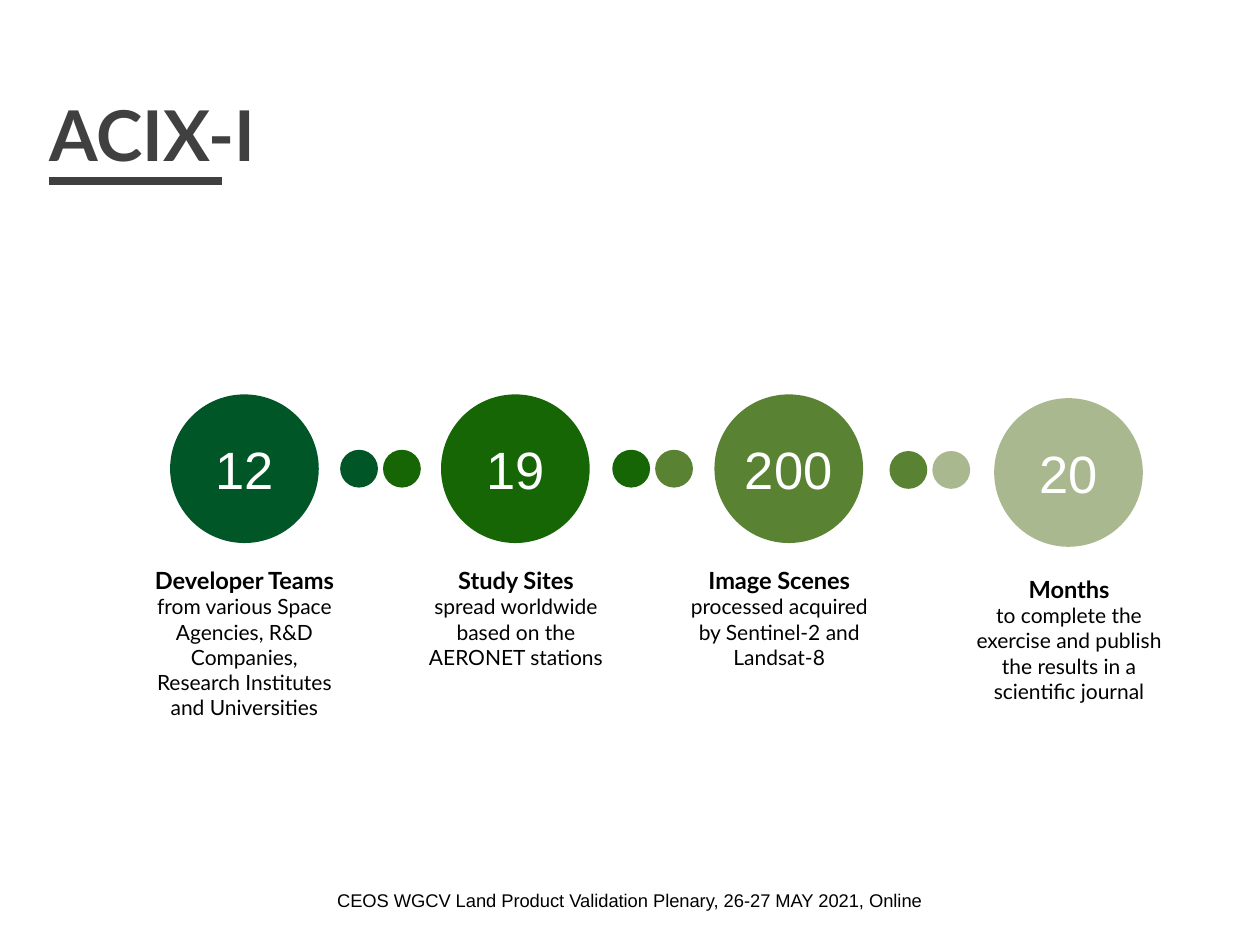
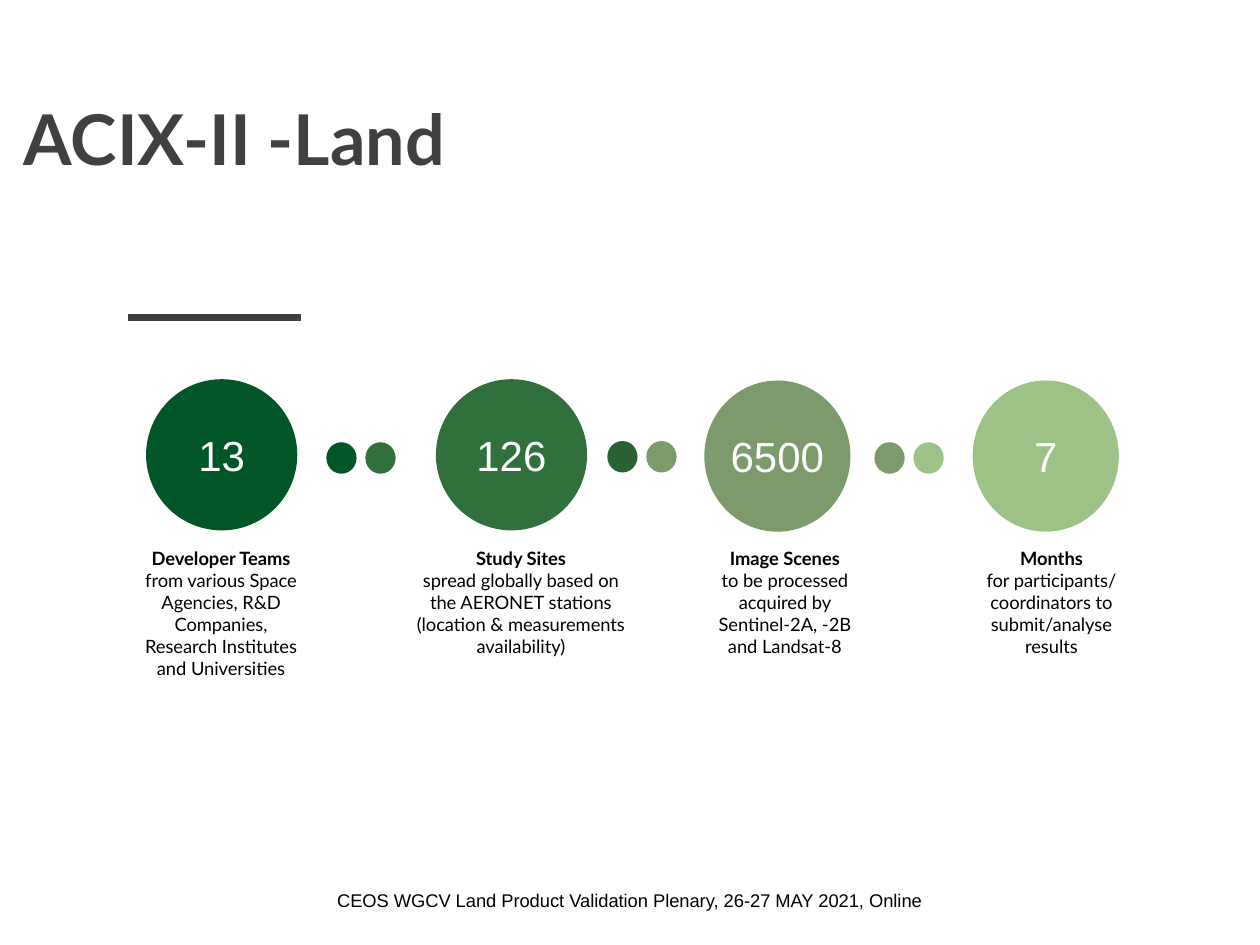
import pptx
import pptx.util
from dataclasses import dataclass
from pptx.dml.color import RGBColor
from pptx.enum.shapes import MSO_CONNECTOR, MSO_SHAPE
from pptx.enum.text import MSO_ANCHOR, MSO_AUTO_SIZE, PP_ALIGN
from pptx.oxml.xmlchemy import OxmlElement
from pptx.util import Inches

# Shared colours, fonts and wording
WHITE = RGBColor(0xFF, 0xFF, 0xFF)
BLACK = RGBColor(0x00, 0x00, 0x00)
CHARCOAL = RGBColor(0x40, 0x40, 0x40)
DARK_GREEN = RGBColor(0x00, 0x56, 0x27)
LEAF_GREEN = RGBColor(0x16, 0x66, 0x05)
OLIVE = RGBColor(0x59, 0x82, 0x33)
PALE_OLIVE = RGBColor(0xA9, 0xB8, 0x8E)
FOREST = RGBColor(0x2F, 0x70, 0x3C)
DEEP_FOREST = RGBColor(0x28, 0x61, 0x33)
SAGE = RGBColor(0x7C, 0x9A, 0x6A)
LIGHT_GREEN = RGBColor(0x9D, 0xC2, 0x86)
HEADING_FONT = "Lato"
NUMBER_FONT = "Arial"
FOOTER = "CEOS WGCV Land Product Validation Plenary, 26-27 MAY 2021, Online"
TEAM_LINES = ["from various Space Agencies, R&D Companies,",
              "Research Institutes", "and Universities"]


@dataclass
class Stage:
    number: str
    color: RGBColor
    circle: tuple  # left, top, width, height
    caption: tuple
    heading: str
    lines: list


@dataclass
class Style:
    number_size: float
    heading_size: float
    body_size: float
    dot_size: tuple
    dot_step: float


def write(paragraph, text, font=HEADING_FONT, size=12, color=BLACK, bold=False,
          align=PP_ALIGN.CENTER):
    paragraph.alignment = align
    run = paragraph.add_run()
    run.text = text
    run.font.name = font
    run.font.size = pptx.util.Pt(size)
    run.font.bold = bold
    run.font.color.rgb = color


def add_text_box(slide, box):
    frame = slide.shapes.add_textbox(*map(Inches, box)).text_frame
    frame.word_wrap = True
    return frame


def add_circle(slide, box, color):
    circle = slide.shapes.add_shape(MSO_SHAPE.OVAL, *map(Inches, box))
    circle.shadow.inherit = False
    circle.fill.solid()
    circle.fill.fore_color.rgb = color
    circle.line.fill.background()
    return circle


def add_title(slide, text, box):
    title = slide.shapes.title
    title.left, title.top, title.width, title.height = map(Inches, box)
    frame = title.text_frame
    frame.auto_size = MSO_AUTO_SIZE.NONE
    frame.vertical_anchor = MSO_ANCHOR.TOP
    write(frame.paragraphs[0], text, size=40, color=CHARCOAL, bold=True,
          align=PP_ALIGN.LEFT)


def add_rule(slide, left, top, width=1.37):
    rule = slide.shapes.add_connector(
        MSO_CONNECTOR.STRAIGHT, *map(Inches, (left, top, left + width, top)))
    rule.line.color.rgb = CHARCOAL
    rule.line.width = pptx.util.Pt(4.5)
    rule._element.spPr.append(OxmlElement("a:effectLst"))


def add_stage(slide, stage, style):
    # Number in its circle
    frame = add_circle(slide, stage.circle, stage.color).text_frame
    frame.word_wrap = False
    frame.vertical_anchor = MSO_ANCHOR.MIDDLE
    write(frame.paragraphs[0], stage.number, font=NUMBER_FONT,
          size=style.number_size, color=WHITE)
    # Caption below
    frame = add_text_box(slide, stage.caption)
    write(frame.paragraphs[0], stage.heading, size=style.heading_size, bold=True)
    for line in stage.lines:
        write(frame.add_paragraph(), line, size=style.body_size)


def add_dot_pair(slide, left, top, colors, style):
    for index, color in enumerate(colors):
        add_circle(slide, (left + index * style.dot_step, top, *style.dot_size), color)


def add_footer(slide):
    frame = add_text_box(slide, (0, 7.01, 10, 0.52))
    write(frame.paragraphs[0], FOOTER, font=NUMBER_FONT, size=10.5)


def add_figures_slide(presentation, title, title_box, rule, stages, dot_pairs, style):
    slide = presentation.slides.add_slide(presentation.slide_layouts[5])
    add_title(slide, title, title_box)
    add_rule(slide, *rule)
    for stage in stages:
        add_stage(slide, stage, style)
    for left, top, *colors in dot_pairs:
        add_dot_pair(slide, left, top, colors, style)
    add_footer(slide)


def main():
    presentation = pptx.Presentation()
    presentation.slide_width = Inches(10)
    presentation.slide_height = Inches(7.5)

    # First exercise
    add_figures_slide(
        presentation, "ACIX-I", (0.29, 0.68, 5.98, 0.64), (0.39, 1.44),
        [
            Stage("12", DARK_GREEN, (1.35, 3.13, 1.18, 1.18),
                  (1.05, 4.44, 1.78, 1.34), "Developer Teams", TEAM_LINES),
            Stage("19", LEAF_GREEN, (3.5, 3.13, 1.18, 1.18),
                  (3.24, 4.44, 1.71, 0.93), "Study Sites",
                  ["spread worldwide based on the AERONET stations"]),
            Stage("200", OLIVE, (5.67, 3.13, 1.18, 1.18),
                  (5.33, 4.44, 1.71, 0.93), "Image Scenes",
                  ["processed acquired by Sentinel-2 and Landsat-8"]),
            Stage("20", PALE_OLIVE, (7.89, 3.16, 1.18, 1.18),
                  (7.63, 4.51, 1.71, 1.34), "Months",
                  ["to complete the exercise and publish the results in a "
                   "scientific journal"]),
        ],
        [(2.7, 3.57, DARK_GREEN, LEAF_GREEN), (4.86, 3.57, LEAF_GREEN, OLIVE),
         (7.06, 3.58, OLIVE, PALE_OLIVE)],
        Style(30, 13.5, 12, (0.3, 0.3), 0.34))

    # Second exercise
    add_figures_slide(
        presentation, "ACIX-II -Land", (0.09, 0.71, 5.98, 0.64), (1.02, 2.52),
        [
            Stage("13", DARK_GREEN, (1.16, 3.01, 1.2, 1.2),
                  (0.9, 4.29, 1.71, 1.16), "Developer Teams", TEAM_LINES),
            Stage("126", FOREST, (3.46, 3.01, 1.2, 1.2),
                  (3.2, 4.29, 1.87, 1.16), "Study Sites",
                  ["spread globally based on the AERONET stations "
                   "(location & measurements availability)"]),
            Stage("6500", SAGE, (5.59, 3.02, 1.16, 1.2),
                  (5.53, 4.29, 1.4, 0.98), "Image Scenes",
                  ["to be processed acquired by Sentinel-2A, -2B and Landsat-8"]),
            Stage("7", LIGHT_GREEN, (7.72, 3.02, 1.16, 1.2),
                  (7.59, 4.29, 1.51, 0.98), "Months",
                  ["for participants/ coordinators to submit/analyse results"]),
        ],
        [(2.59, 3.51, DARK_GREEN, FOREST), (4.82, 3.5, DEEP_FOREST, SAGE),
         (6.94, 3.51, SAGE, LIGHT_GREEN)],
        Style(24, 10.5, 10.5, (0.24, 0.25), 0.31))

    presentation.save("out.pptx")


if __name__ == "__main__":
    main()
